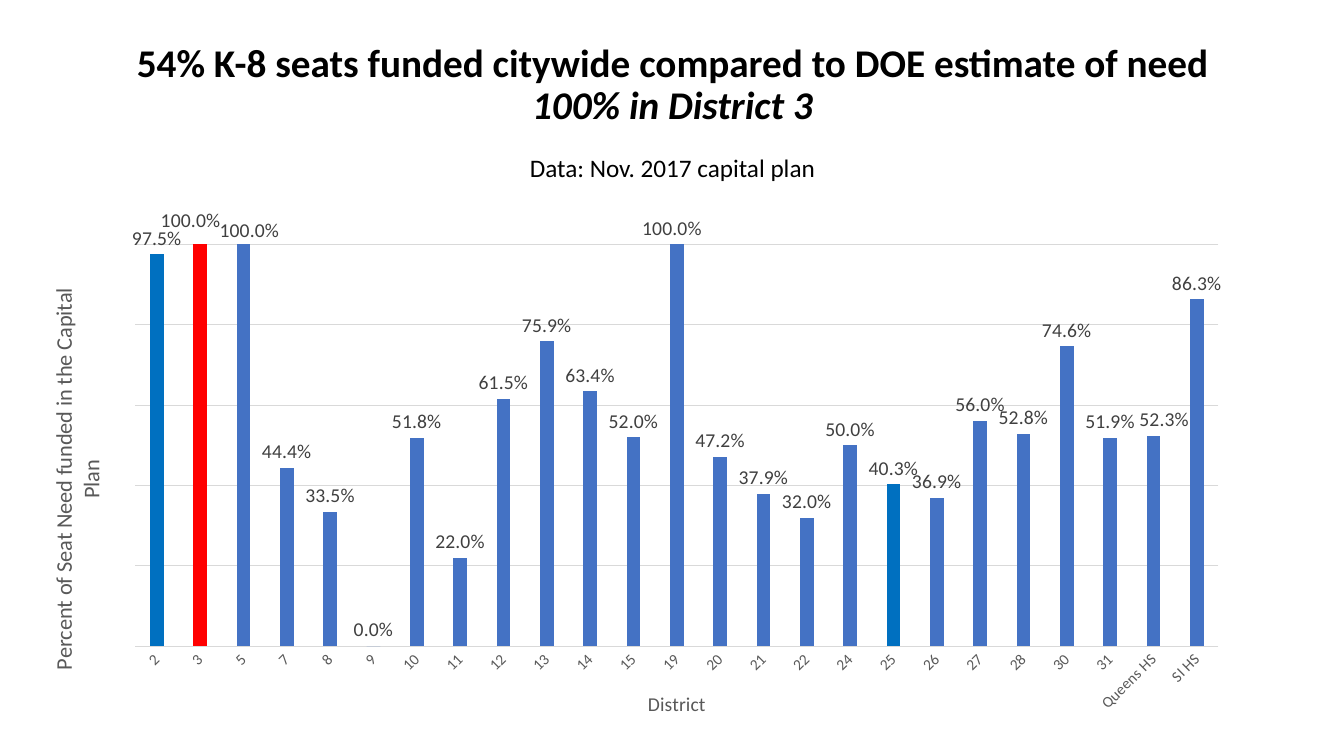
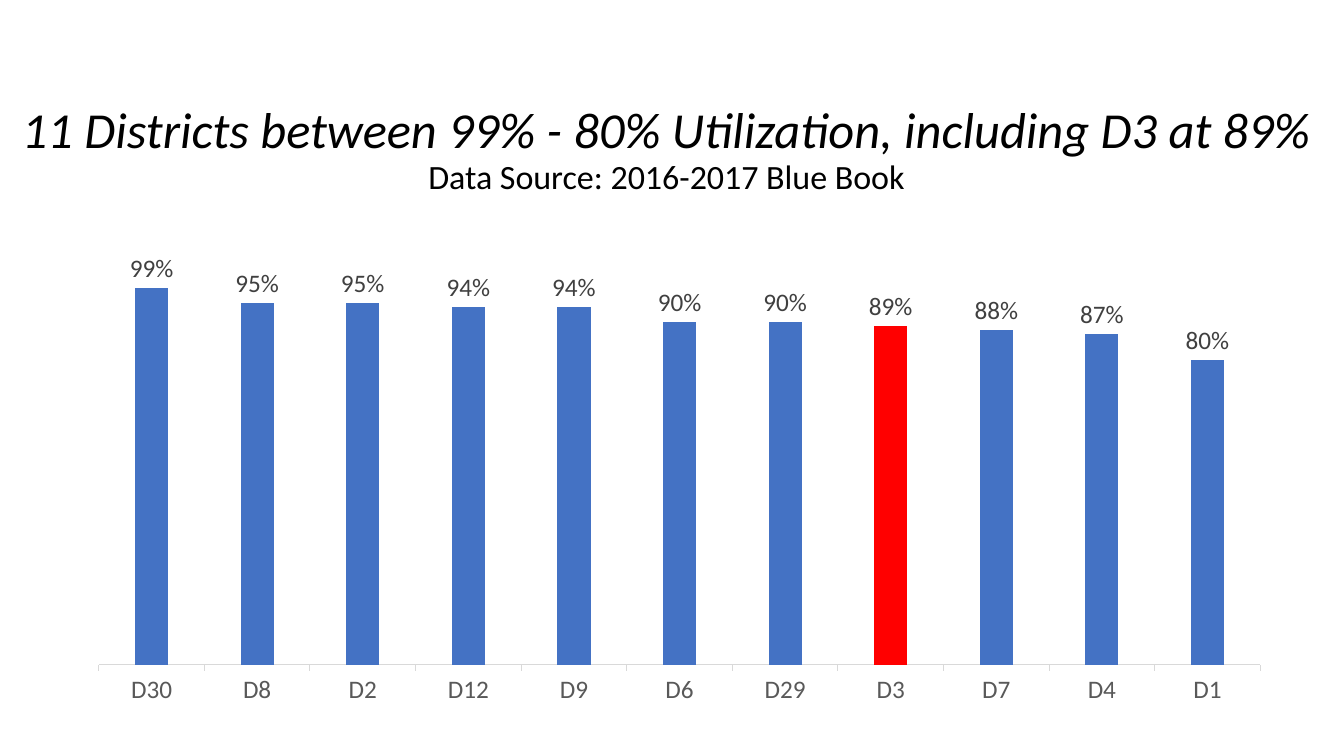
import dataclasses

import pptx
import pptx.chart.data
import pptx.dml.color
import pptx.enum.chart
import pptx.enum.text
import pptx.oxml
import pptx.oxml.ns
import pptx.util

Inches, Pt = pptx.util.Inches, pptx.util.Pt
RGB = pptx.dml.color.RGBColor.from_string
XL = pptx.enum.chart
ANCHOR = pptx.enum.text.MSO_ANCHOR


@dataclasses.dataclass(frozen=True)
class Theme:
    font: str = "Calibri"
    text: str = "000000"
    background: str = "FFFFFF"
    bar: str = "4472C4"
    district_3: str = "FF0000"
    accent: str = "0070C0"
    axis_text: str = "595959"
    label_text: str = "404040"
    rule: str = "D9D9D9"
    headline: int = 28
    large_headline: int = 36
    source: int = 18
    large_source: float = 24.3
    value_title: int = 16
    chart_text: int = 14
    large_chart_text: int = 18
    district_names: int = 11


THEME = Theme()


def write(frame, text, first=False, size=18, color=THEME.text, bold=False,
          italic=False, space_before=0, line_spacing=0.9):
    """Add one centred paragraph; first=True fills the paragraph already there."""
    paragraph = frame.paragraphs[0] if first else frame.add_paragraph()
    paragraph.alignment = pptx.enum.text.PP_ALIGN.CENTER
    paragraph.line_spacing = line_spacing
    paragraph.space_before = Pt(space_before)
    run = paragraph.add_run()
    run.text = text
    run.font.name = THEME.font
    run.font.size = Pt(size)
    run.font.bold = bold
    run.font.italic = italic
    run.font.color.rgb = RGB(color)


def add_bar_chart(slide, box, values, number_format, maximum, highlights,
                  name_size, label_size, tick):
    """Draw one column per district, with a value label and highlighted bars."""
    data = pptx.chart.data.CategoryChartData(number_format=number_format)
    data.categories = list(values)
    data.add_series("Series 1", list(values.values()))
    chart = slide.shapes.add_chart(
        XL.XL_CHART_TYPE.COLUMN_CLUSTERED, *map(Inches, box), data).chart
    chart.has_title = False
    chart.has_legend = False
    chart.font.name = THEME.font
    chart.font.size = Pt(10)
    chart.font.color.rgb = RGB(THEME.text)

    plot = chart.plots[0]
    plot.vary_by_categories = False
    plot.gap_width = 219
    plot.overlap = -27
    series = plot.series[0]
    series.format.fill.solid()
    series.format.fill.fore_color.rgb = RGB(THEME.bar)
    districts = list(values)
    for district, color in highlights.items():
        fill = series.points[districts.index(district)].format.fill
        fill.solid()
        fill.fore_color.rgb = RGB(color)

    labels = series.data_labels
    labels.show_value = True
    labels.number_format = number_format
    labels.number_format_is_linked = False
    labels.position = XL.XL_LABEL_POSITION.OUTSIDE_END

    names = chart.category_axis
    names.has_major_gridlines = False
    names.major_tick_mark = tick
    names.format.line.color.rgb = RGB(THEME.rule)
    names.format.line.width = Pt(0.75)
    for font, size, color in (
            (labels.font, label_size, THEME.label_text),
            (names.tick_labels.font, name_size, THEME.axis_text)):
        font.name = THEME.font
        font.size = Pt(size)
        font.color.rgb = RGB(color)

    scale = chart.value_axis
    scale.minimum_scale = 0
    scale.maximum_scale = maximum
    scale.major_unit = 0.2
    scale.has_major_gridlines = False
    scale.visible = False
    return chart


deck = pptx.Presentation()
deck.slide_width, deck.slide_height = Inches(13.33), Inches(7.5)
blank = deck.slide_layouts[6]

# Slide 1: share of seat need that is funded
funding = deck.slides.add_slide(blank)
funded_share = {
    "2": 0.975, "3": 1, "5": 1, "7": 0.444, "8": 0.335, "9": 0, "10": 0.518,
    "11": 0.22, "12": 0.615, "13": 0.759, "14": 0.634, "15": 0.52, "19": 1,
    "20": 0.472, "21": 0.379, "22": 0.32, "24": 0.5, "25": 0.403,
    "26": 0.369, "27": 0.56, "28": 0.528, "30": 0.746, "31": 0.519,
    "Queens HS": 0.523, "SI HS": 0.863,
}
funding_chart = add_bar_chart(
    funding, (0.38, 1.91, 11.86, 5.26), funded_share, "0.0%", 1,
    {"2": THEME.accent, "3": THEME.district_3, "25": THEME.accent},
    THEME.district_names, THEME.chart_text, XL.XL_TICK_MARK.NONE)
share_axis = funding_chart.value_axis
share_axis.has_major_gridlines = True
share_axis.major_gridlines.format.line.color.rgb = RGB(THEME.rule)
share_axis.major_gridlines.format.line.width = Pt(0.75)
for axis, title, size in (
        (funding_chart.category_axis, "District", THEME.chart_text),
        (share_axis, "Percent of Seat Need funded in the Capital Plan",
         THEME.value_title)):
    write(axis.axis_title.text_frame, title, first=True, size=size,
          color=THEME.axis_text, line_spacing=1)

chart_xml = funding_chart.element
for target, degrees in (("c:catAx/c:txPr", -45), ("c:valAx/c:title/c:tx/c:rich", -90)):
    body = chart_xml.xpath(f".//{target}/a:bodyPr")[0]
    body.set("rot", str(degrees * 60000))
    body.set("vert", "horz")

# Each entry: parent element, place of the layout in it, layout settings
# as fractions of the chart
placements = [
    (chart_xml.xpath(".//c:plotArea")[0], 0,
     {"layoutTarget": "inner", "xMode": "edge", "yMode": "edge",
      "x": 0.081, "y": 0.098, "w": 0.906, "h": 0.758}),
    (chart_xml.xpath(".//c:valAx/c:title")[0], 1,
     {"xMode": "edge", "yMode": "edge", "x": 0.005, "y": 0.173}),
]
label_shifts = {"3": (-0.008, -0.015), "5": (0.005, 0.005),
                "19": (-0.004, 0), "Queens HS": (0.009, 0)}
for district, (x, y) in label_shifts.items():
    index = list(funded_share).index(district)
    label = funding_chart.plots[0].series[0].points[index].data_label
    label.font.name = THEME.font
    label.font.size = Pt(THEME.chart_text)
    label.font.color.rgb = RGB(THEME.label_text)
    label.position = XL.XL_LABEL_POSITION.OUTSIDE_END
    label_xml = chart_xml.xpath(f".//c:dLbl[c:idx/@val='{index}']")[0]
    label_xml.insert(1, pptx.oxml.parse_xml(
        f'<c:numFmt {pptx.oxml.ns.nsdecls("c")} formatCode="0.0%" sourceLinked="0"/>'))
    placements.append((label_xml, 1, {"x": x, "y": y}))
for parent, position, settings in placements:
    for old_layout in parent.xpath("./c:layout"):
        parent.remove(old_layout)
    rows = "".join(f'<c:{key} val="{value}"/>' for key, value in settings.items())
    parent.insert(position, pptx.oxml.parse_xml(
        f'<c:layout {pptx.oxml.ns.nsdecls("c")}>'
        f'<c:manualLayout>{rows}</c:manualLayout></c:layout>'))

# Slide 2: building utilization
utilization = deck.slides.add_slide(blank)
utilization_rate = {
    "D30": 0.99, "D8": 0.95, "D2": 0.95, "D12": 0.94, "D9": 0.94, "D6": 0.9,
    "D29": 0.9, "D3": 0.89, "D7": 0.88, "D4": 0.87, "D1": 0.8,
}
add_bar_chart(
    utilization, (0.74, 1.96, 12, 5.14), utilization_rate, "0%", 1.2,
    {"D3": THEME.district_3}, THEME.large_chart_text, THEME.large_chart_text,
    XL.XL_TICK_MARK.OUTSIDE)

# Headlines of both slides
headlines = (
    (funding, (0.92, 0.38, 11.5, 1.49), ANCHOR.MIDDLE, True, (
        ("54% K-8 seats funded citywide compared to DOE estimate of need",
         {"size": THEME.headline, "bold": True}),
        ("100% in District 3",
         {"size": THEME.headline, "bold": True, "italic": True}),
        ("Data: Nov. 2017 capital plan",
         {"size": THEME.source, "space_before": 20}))),
    (utilization, (0.05, 0.5, 13.12, 1.45), ANCHOR.BOTTOM, False, (
        ("11 Districts between 99% - 80% Utilization, including D3 at 89%",
         {"size": THEME.large_headline, "italic": True}),
        ("Data Source: 2016-2017 Blue Book", {"size": THEME.large_source}))),
)
for slide, box, anchor, filled, lines in headlines:
    headline = slide.shapes.add_textbox(*map(Inches, box))
    if filled:
        headline.fill.solid()
        headline.fill.fore_color.rgb = RGB(THEME.background)
    frame = headline.text_frame
    frame.word_wrap = True
    frame.vertical_anchor = anchor
    frame.margin_left = frame.margin_right = Inches(0.05)
    frame.margin_top = frame.margin_bottom = 0
    for number, (text, style) in enumerate(lines):
        write(frame, text, first=number == 0, **style)

deck.save("out.pptx")
